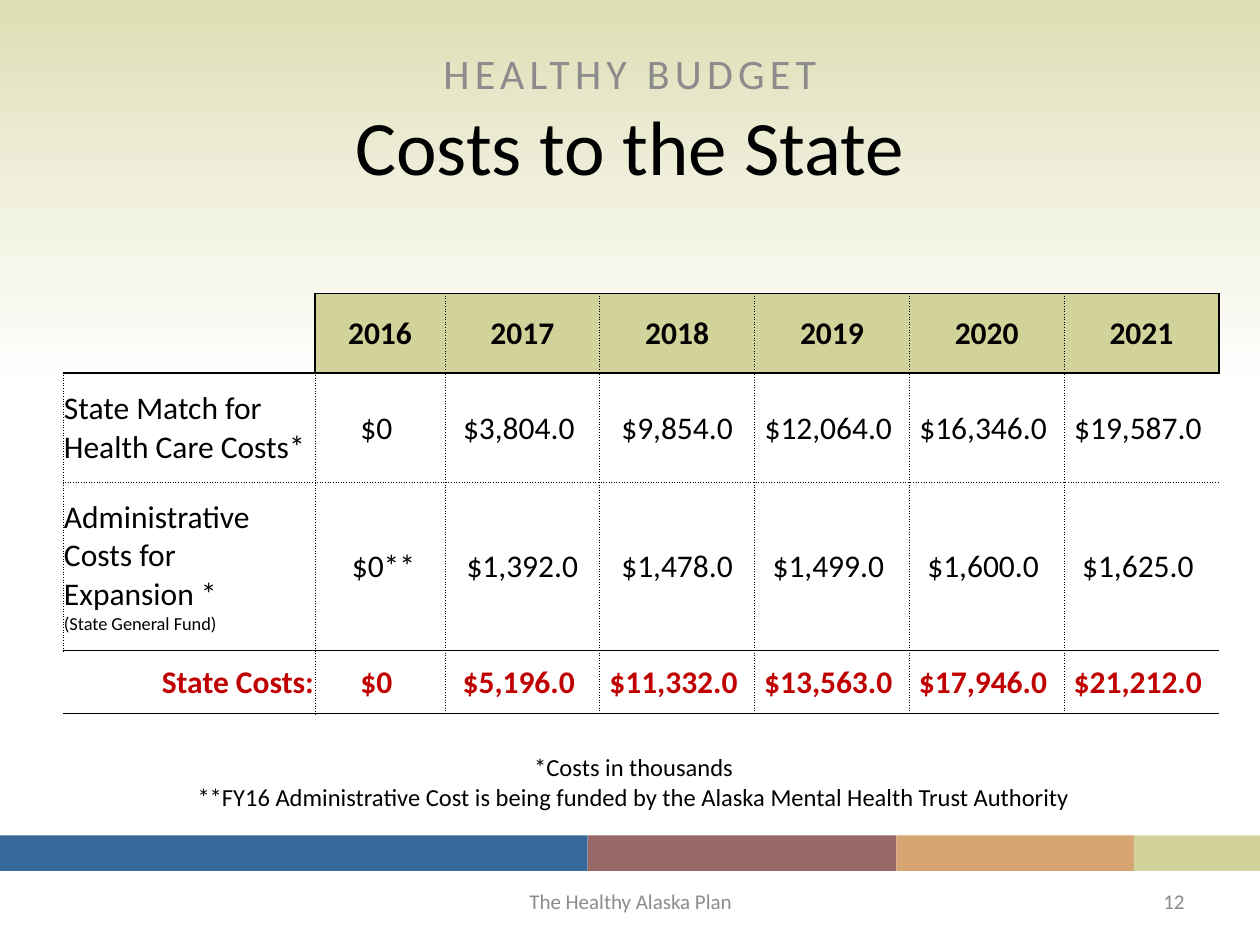
import copy

import lxml.etree
import pptx
import pptx.dml.color
import pptx.enum.dml
import pptx.enum.text
import pptx.oxml
import pptx.oxml.ns
import pptx.util

Cm = pptx.util.Cm
Pt = pptx.util.Pt
ALIGN = pptx.enum.text.PP_ALIGN
MIDDLE = pptx.enum.text.MSO_ANCHOR.MIDDLE
qn = pptx.oxml.ns.qn


def colour(hex_string):
    return pptx.dml.color.RGBColor.from_string(hex_string)


def write(text_frame, text, size, hex_string="000000", align=ALIGN.CENTER, bold=False):
    text_frame.text = text
    for paragraph in text_frame.paragraphs:
        paragraph.alignment = align
        for run in paragraph.runs:
            run.font.name = "Calibri"
            run.font.size = Pt(size)
            run.font.bold = bold
            run.font.color.rgb = colour(hex_string)


presentation = pptx.Presentation()
presentation.slide_width = Cm(25.4)
presentation.slide_height = Cm(19.05)
slide = presentation.slides.add_slide(presentation.slide_layouts[5])

background = slide.background.fill
background.gradient()
background.gradient_angle = 270
first_stop = background.gradient_stops[0]._gs
first_stop.addnext(copy.deepcopy(first_stop))
gradient = [(0, "DDDEB3"), (0.19, "EFEFDB"), (0.41, "FFFFFF")]
for stop, (position, hex_string) in zip(background.gradient_stops, gradient):
    stop.position = position
    stop.color.rgb = colour(hex_string)

band_left = 0
for width, hex_string in [(11.85, "37699A"), (6.22, "986866"), (4.79, "D7A572"), (2.54, "D2D39A")]:
    band = slide.shapes.add_shape(
        pptx.enum.shapes.MSO_SHAPE.RECTANGLE, Cm(band_left), Cm(16.84), Cm(width), Cm(0.72))
    band.shadow.inherit = False
    band.fill.solid()
    band.fill.fore_color.rgb = colour(hex_string)
    band.line.fill.background()
    band_left += width

title = slide.shapes.title
title.left, title.top, title.width, title.height = Cm(1.27), Cm(1.9), Cm(22.86), Cm(2.03)
title.text_frame.vertical_anchor = MIDDLE
write(title.text_frame, "Costs to the State", 44)

kicker = slide.shapes.add_textbox(Cm(1.27), Cm(0.84), Cm(22.86), Cm(1.07))
kicker.text_frame.word_wrap = True
write(kicker.text_frame, "HEALTHY BUDGET", 24, "8C8C8C")
kicker_paragraph = kicker.text_frame.paragraphs[0]
kicker_paragraph.space_before = Pt(4.8)
kicker_paragraph.runs[0].font._element.set("spc", "300")

for text, left, width, align in [
    ("The Healthy Alaska Plan", 8.69, 8.05, ALIGN.CENTER),
    ("12", 18.21, 5.92, ALIGN.RIGHT),
]:
    footer = slide.shapes.add_textbox(Cm(left), Cm(17.65), Cm(width), Cm(1.02))
    footer.text_frame.word_wrap = True
    footer.text_frame.vertical_anchor = MIDDLE
    write(footer.text_frame, text, 12, "8C8C8C", align)

costs = [
    ["", "2016", "2017", "2018", "2019", "2020", "2021"],
    ["State Match for Health Care Costs*",
     "$0 ", "$3,804.0 ", "$9,854.0", "$12,064.0 ", "$16,346.0 ", "$19,587.0 "],
    ["Administrative Costs for  Expansion *\v(State General Fund)",
     " $0**", "$1,392.0", "$1,478.0", "$1,499.0 ", "$1,600.0 ", "$1,625.0 "],
    [" State Costs:",
     "$0 ", "$5,196.0 ", "$11,332.0 ", "$13,563.0 ", "$17,946.0 ", "$21,212.0 "],
]
column_widths = [5.08, 2.62] + [3.12] * 5
row_heights = [1.6, 2.21, 3.38, 1.27]
vertical_edges = [
    [None, "solid"] + ["dot"] * 5 + ["solid"],
    ["dot"] * 7 + [None],
    ["dot"] * 7 + [None],
    [None] + ["dot"] * 6 + [None],
]
horizontal_edges = [[None] + ["solid"] * 6, ["solid"] * 7, ["dot"] * 7, ["solid"] * 7, ["solid"] * 7]
line_widths = {"solid": Pt(1), "dot": Pt(0.5)}

table = slide.shapes.add_table(
    4, 7, Cm(1.27), Cm(5.92), Cm(sum(column_widths)), Cm(sum(row_heights))).table
table.first_row = False
table.horz_banding = False
for column, width in zip(table.columns, column_widths):
    column.width = Cm(width)
for row, height in zip(table.rows, row_heights):
    row.height = Cm(height)

for row_index, row_texts in enumerate(costs):
    is_header, is_total = row_index == 0, row_index == 3
    for column_index, text in enumerate(row_texts):
        cell = table.cell(row_index, column_index)
        cell.margin_left = cell.margin_right = cell.margin_top = Cm(0.02)
        cell.margin_bottom = 0
        cell.vertical_anchor = MIDDLE
        if column_index:
            align = ALIGN.CENTER
        else:
            align = ALIGN.RIGHT if is_total else ALIGN.LEFT
        write(cell.text_frame, text, 18, "C00000" if is_total else "000000",
              align, is_header or is_total)
        if is_header and column_index:
            cell.fill.solid()
            cell.fill.fore_color.rgb = colour("D2D39A")
        else:
            cell.fill.background()
        borders = {
            "a:lnL": vertical_edges[row_index][column_index],
            "a:lnR": vertical_edges[row_index][column_index + 1],
            "a:lnT": horizontal_edges[row_index][column_index],
            "a:lnB": horizontal_edges[row_index + 1][column_index],
        }
        for position, (tag, dash) in enumerate(borders.items()):
            border = lxml.etree.Element(qn(tag))
            cell._tc.tcPr.insert(position, border)
            if dash is None:
                lxml.etree.SubElement(border, qn("a:noFill"))
                continue
            border.set("w", str(line_widths[dash]))
            fill = lxml.etree.SubElement(border, qn("a:solidFill"))
            lxml.etree.SubElement(fill, qn("a:srgbClr"), val="000000")
            lxml.etree.SubElement(border, qn("a:prstDash"), val="sysDot" if dash == "dot" else dash)

table.cell(2, 0).text_frame.paragraphs[0].runs[-1].font.size = Pt(10.5)

footnotes = slide.shapes.add_textbox(Cm(3.63), Cm(15.04), Cm(18.29), Cm(1.45))
footnotes.text_frame.word_wrap = False
write(footnotes.text_frame,
      "*Costs in thousands\n"
      "**FY16 Administrative Cost is being funded by the Alaska Mental Health Trust Authority", 14)

presentation.save("out.pptx")
